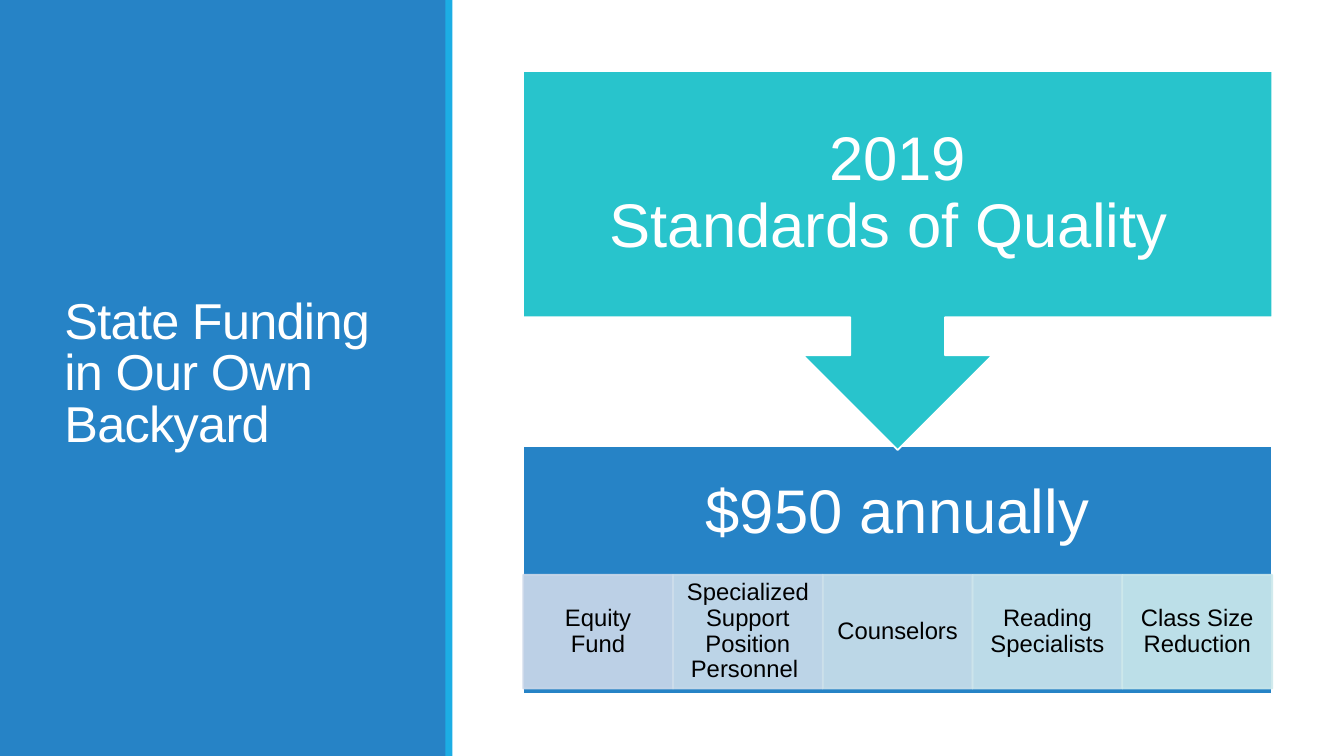
from dataclasses import dataclass

from lxml import etree
from pptx import Presentation
from pptx import util as u
from pptx.dml import color
from pptx.enum import shapes, text
from pptx.oxml import ns

Pt = u.Pt
RECT = shapes.MSO_SHAPE.RECTANGLE
ARROW = shapes.MSO_SHAPE.DOWN_ARROW_CALLOUT
WHITE, BLUE, CYAN, TEAL = "FFFFFF", "2683C6", "1CADE4", "28C4CC"


@dataclass
class Block:
    x: float
    y: float
    w: float
    h: float
    fill: str
    line: str = ""
    kind: shapes.MSO_SHAPE = RECT
    alpha: int = 100


@dataclass
class Label:
    words: str
    size: float
    ink: str
    inset: tuple[float, float, float, float]
    lead: float = 0.9
    align: text.PP_ALIGN = text.PP_ALIGN.CENTER


def paint(target, tone: str, alpha: int = 100) -> None:
    target.solid()
    target.fore_color.rgb = color.RGBColor.from_string(tone)
    if alpha < 100:
        for node in target._xPr.iter(ns.qn("a:srgbClr")):
            etree.SubElement(node, ns.qn("a:alpha")).set("val", str(alpha * 1000))


def draw(slide, block: Block):
    shape = slide.shapes.add_shape(
        block.kind, Pt(block.x), Pt(block.y), Pt(block.w), Pt(block.h))
    shape.shadow.inherit = False
    paint(shape.fill, block.fill, block.alpha)
    if block.line:
        shape.line.width = Pt(1.25)
        paint(shape.line.fill, block.line)
        if block.alpha < 100:
            tone = shape.line._ln.find(".//" + ns.qn("a:srgbClr"))
            etree.SubElement(tone, ns.qn("a:alpha")).set("val", str(block.alpha * 1000))
    else:
        shape.line.fill.background()
    return shape


def write(shape, label: Label):
    frame = shape.text_frame
    frame.text = label.words
    frame.word_wrap = True
    frame.vertical_anchor = text.MSO_ANCHOR.MIDDLE
    left, top, right, base = (Pt(v) for v in label.inset)
    frame.margin_left, frame.margin_top = left, top
    frame.margin_right, frame.margin_bottom = right, base
    para = frame.paragraphs[0]
    para.alignment = label.align
    para.line_spacing = label.lead
    for run in para.runs:
        run.font.name = "Arial"
        run.font.size = Pt(label.size)
        paint(run.font.fill, label.ink)
    return para


def main() -> None:
    deck = Presentation()
    deck.slide_width, deck.slide_height = Pt(960), Pt(540)
    slide = deck.slides.add_slide(deck.slide_layouts[6])

    draw(slide, Block(0, 0, 319, 540, BLUE))
    title = slide.shapes.add_textbox(Pt(39), Pt(41), Pt(242.6), Pt(454.3))
    para = write(title, Label("State Funding in Our Own Backyard", 36, WHITE,
                              (7.2, 3.6, 7.2, 3.6), 0.85, text.PP_ALIGN.LEFT))
    for run in para.runs:
        run.font._element.set("spc", "-50")
    draw(slide, Block(318.2, 0, 5, 540, CYAN))

    left, width, pad = 373.7, 535, 24.5
    base = draw(slide, Block(left, 319, width, 176.4, BLUE, WHITE))
    write(base, Label("$950 annually", 44, WHITE, (pad, pad, pad, pad + 81.2)))

    cells = [
        ("Equity Fund", "CDD9EA"),
        ("Specialized Support Position Personnel ", "CDDDEB"),
        ("Counselors", "CDE1EB"),
        ("Reading Specialists", "CDE5EC"),
        ("Class Size Reduction", "CDE9EC"),
    ]
    step = width / len(cells)
    for i, (words, tone) in enumerate(cells):
        cell = draw(slide, Block(left + i * step, 410.6, step, 81.2, tone, tone, alpha=90))
        write(cell, Label(words, 17, "000000", (9.4, 1.4, 9.4, 1.4)))

    head = draw(slide, Block(left, 50.7, width, 270.7, TEAL, WHITE, ARROW))
    write(head, Label("2019\vStandards of Quality ", 44, WHITE, (pad,) * 4))
    deck.save("out.pptx")


if __name__ == "__main__":
    main()
